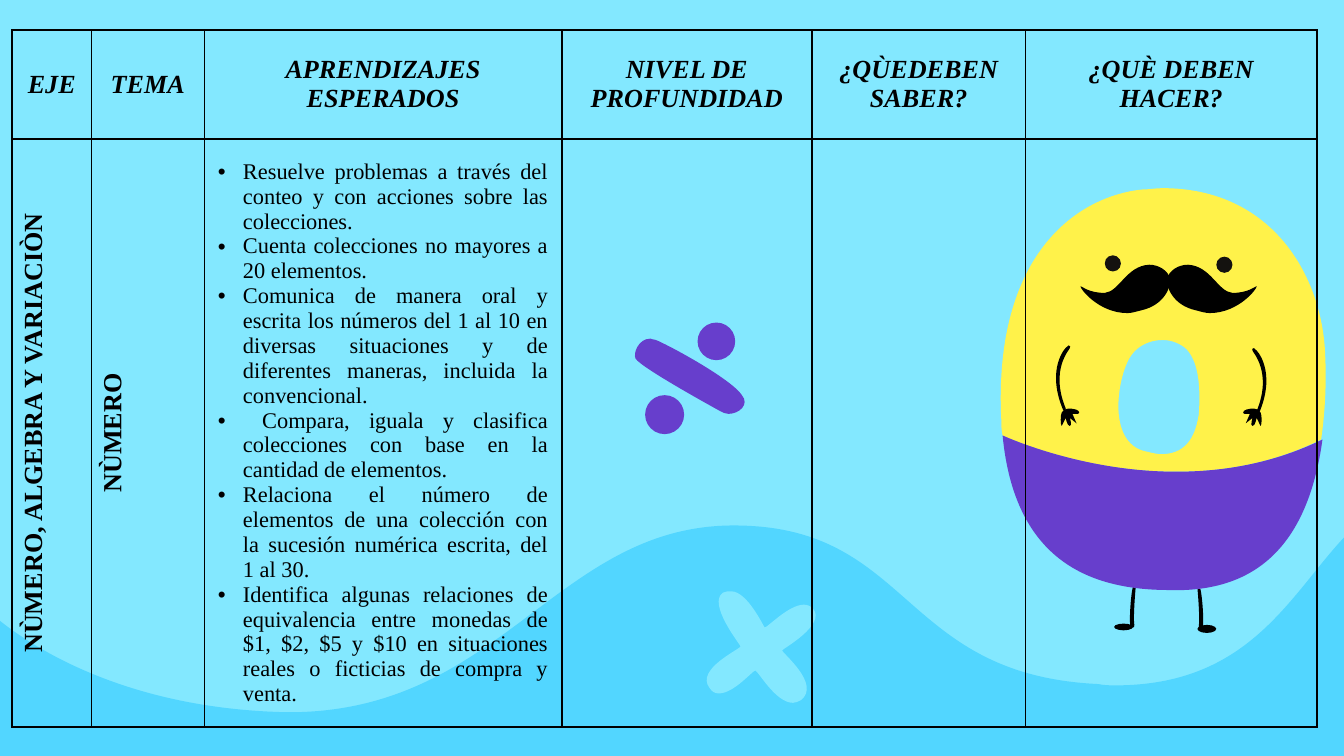
import dataclasses
import lxml.etree
import pptx
import pptx.dml.color
import pptx.enum.shapes
import pptx.enum.text
import pptx.oxml.ns
import pptx.util

Pt = pptx.util.Pt
Align = pptx.enum.text.PP_ALIGN
Anchor = pptx.enum.text.MSO_ANCHOR
qn = pptx.oxml.ns.qn


@dataclasses.dataclass(frozen=True)
class Theme:
    sky: str = "83E8FF"
    wave: str = "52D6FF"
    sun: str = "FFF24A"
    plum: str = "673ECC"
    ink: str = "000000"
    eye: str = "14120F"
    face: str = "Times New Roman"
    head: float = 14
    body: float = 12


THEME = Theme()

WAVE = [(0, 71), (29, 94, 99, 137, 215, 139), (373, 139, 414, 0, 546, 0),
        (679, 0, 669, 111, 817, 118), (822, 119, 826, 119, 830, 119),
        (929, 119, 959, 53, 1000, 9), (1000, 172), (0, 172)]
CROSS = [(27, 0), (25, 0, 23, 0, 21, 1), (9, 9, 34, 40, 34, 41),
         (34, 43, 0, 58, 11, 72), (13, 75, 15, 76, 18, 76),
         (29, 76, 43, 59, 45, 59), (47, 59, 60, 83, 73, 83),
         (75, 83, 77, 82, 79, 81), (94, 69, 65, 46, 65, 44),
         (65, 43, 98, 25, 88, 13), (86, 11, 84, 10, 81, 10),
         (70, 10, 54, 27, 52, 27), (51, 26, 39, 0, 27, 0)]
BAR = [(13, 12), (4, 12, 0, 23, 2, 27), (7, 34, 56, 61, 65, 66),
       (67, 67, 69, 68, 71, 68), (79, 68, 87, 61, 81, 54),
       (73, 42, 27, 17, 17, 13), (15, 13, 14, 12, 13, 12)]
SKIN = [(125, 0), (120, 0, 115, 1, 110, 1), (61, 6, -1, 50, 5, 172),
        (5, 176, 5, 180, 6, 184), (6, 184, 63, 211, 135, 211),
        (170, 211, 207, 205, 243, 187), (246, 166, 247, 145, 246, 124),
        (244, 66, 207, 0, 125, 0)]
HOLE = [(125, 113), (132, 113, 139, 116, 143, 120),
        (153, 131, 153, 152, 152, 168), (150, 181, 145, 198, 124, 198),
        (121, 198, 117, 197, 113, 196), (82, 190, 92, 137, 102, 124),
        (107, 117, 116, 113, 125, 113)]
PANTS = [(6, 184), (15, 278, 72, 299, 130, 299), (134, 299, 137, 299, 141, 299),
         (194, 297, 233, 267, 244, 187), (207, 205, 170, 211, 135, 211),
         (64, 211, 6, 184, 6, 184)]
LEG = [(104, 296), (103, 296, 103, 296, 103, 297), (102, 298, 100, 319, 101, 326),
       (101, 326, 102, 327, 103, 327), (104, 327, 104, 326, 104, 325),
       (103, 319, 105, 297, 105, 297)]
ARM = [(55, 117), (54, 117, 54, 117, 54, 118), (53, 118, 38, 134, 51, 165),
       (51, 165, 51, 166, 52, 166), (53, 165, 53, 164, 53, 164),
       (41, 135, 56, 120, 56, 119), (57, 118, 56, 117, 55, 117)]
HAND = [(55, 164), (53, 164, 51, 165, 50, 167), (49, 169, 49, 176, 50, 177),
        (53, 171), (53, 171, 54, 177, 56, 177), (58, 177, 56, 171, 56, 171),
        (61, 175), (58, 168), (61, 168), (62, 168, 63, 168, 63, 167),
        (63, 165, 59, 164, 55, 164)]
BEARD = [(115, 57), (98, 58, 93, 77, 82, 78), (70, 78, 65, 73, 64, 73),
         (63, 74, 77, 93, 99, 93), (102, 93, 105, 92, 109, 91),
         (127, 87, 131, 73, 131, 68), (129, 61, 122, 57, 115, 57)]

HEADS = ["EJE", "TEMA", "APRENDIZAJES ESPERADOS", "NIVEL DE PROFUNDIDAD",
         "¿QÙEDEBEN SABER?", "¿QUÈ DEBEN HACER?"]
AXES = ["NÙMERO, ALGEBRA Y VARIACIÒN", "NÙMERO"]
GOALS = [
    "Resuelve problemas a través del conteo y con acciones sobre las colecciones.",
    "Cuenta colecciones no mayores a 20 elementos.",
    "Comunica de manera oral y escrita los números del 1 al 10 en diversas "
    "situaciones y de diferentes maneras, incluida la convencional.",
    " Compara, iguala y clasifica colecciones con base en la cantidad de elementos.",
    "Relaciona el número de elementos de una colección con la sucesión numérica "
    "escrita, del 1 al 30.",
    "Identifica algunas relaciones de equivalencia entre monedas de $1, $2, $5 y "
    "$10 en situaciones reales o ficticias de compra y venta.",
]


def tint(code):
    return pptx.dml.color.RGBColor.from_string(code)


def paint(shape, color):
    shape.shadow.inherit = False
    shape.fill.solid()
    shape.fill.fore_color.rgb = tint(color)
    shape.line.fill.background()


def dots(line):
    return [dot for part in line[1:] for dot in zip(part[::2], part[1::2])]


def bend(shape, lines):
    legs = iter(list(shape._element.iter(qn("a:lnTo"))))
    for part in (part for line in lines for part in line[1:]):
        group = [next(legs) for _ in range(len(part) // 2)]
        if len(group) == 3:
            curve = lxml.etree.Element(qn("a:cubicBezTo"))
            group[0].addprevious(curve)
            for leg in group:
                curve.append(leg[0])
                leg.getparent().remove(leg)


def draw(page, box, grid, color, *lines):
    left, top, width = box
    pen = page.shapes.build_freeform(*lines[0][0], scale=Pt(width) / grid)
    for spot, line in enumerate(lines):
        if spot:
            pen.move_to(*line[0])
        pen.add_line_segments(dots(line))
    shape = pen.convert_to_shape(Pt(left), Pt(top))
    bend(shape, lines)
    paint(shape, color)


def pair(page, box, grid, color, line, total, drop):
    twin = [tuple(n + drop if spot % 2 else total - n for spot, n in enumerate(part))
            for part in line]
    for side in (line, twin):
        draw(page, box, grid, color, side)


def oval(page, box, grid, color, spot):
    left, top, width = box
    x, y, w, h = (n * width / grid for n in spot)
    kind = pptx.enum.shapes.MSO_SHAPE.OVAL
    paint(page.shapes.add_shape(kind, Pt(left + x), Pt(top + y), Pt(w), Pt(h)), color)


def add_sea(page, box):
    draw(page, box, 1000, THEME.wave, WAVE)


def add_zero(page, box):
    grid = 250
    pair(page, box, grid, THEME.ink, LEG, 256, 1)
    for spot in ((89, 324, 14, 5), (151, 325, 14, 6)):
        oval(page, box, grid, THEME.ink, spot)
    draw(page, box, grid, THEME.sun, SKIN, HOLE)
    draw(page, box, grid, THEME.plum, PANTS)
    for line, total, drop in ((BEARD, 259, 0), (ARM, 248, 2), (HAND, 248, 0)):
        pair(page, box, grid, THEME.ink, line, total, drop)
    for spot in ((82, 50, 12, 12), (165, 51, 12, 12)):
        oval(page, box, grid, THEME.eye, spot)


def add_times(page, box):
    draw(page, box, 97, THEME.sky, CROSS)


def add_ratio(page, box):
    for spot in ((9, 54, 29, 29), (48, 0, 28, 28)):
        oval(page, box, 87, THEME.plum, spot)
    draw(page, box, 87, THEME.plum, BAR)


def add_mark(para):
    props = para._p.get_or_add_pPr()
    for name, value in {"marL": Pt(13.5), "indent": -Pt(13.5)}.items():
        props.set(name, str(value))
    hue = lxml.etree.SubElement(props, qn("a:buClr"))
    lxml.etree.SubElement(hue, qn("a:srgbClr"), val=THEME.ink)
    lxml.etree.SubElement(props, qn("a:buFont"), typeface="Arial")
    lxml.etree.SubElement(props, qn("a:buChar"), char="•")


def write(cell, lines, align, style, mark=False):
    frame = cell.text_frame
    for spot, line in enumerate(lines):
        para = frame.add_paragraph() if spot else frame.paragraphs[0]
        para.alignment = align
        if mark:
            add_mark(para)
        run = para.add_run()
        run.text = line
        for name, value in {"name": THEME.face, **style}.items():
            setattr(run.font, name, value)
        run.font.color.rgb = tint(THEME.ink)


def edge(cell):
    cell.fill.background()
    props = cell._tc.get_or_add_tcPr()
    for spot, side in enumerate(("lnL", "lnR", "lnT", "lnB")):
        line = lxml.etree.Element(qn("a:" + side), w=str(Pt(1)))
        fill = lxml.etree.SubElement(line, qn("a:solidFill"))
        lxml.etree.SubElement(fill, qn("a:srgbClr"), val=THEME.ink)
        props.insert(spot, line)


def add_plan(page, box):
    cols, rows = (42.5, 60.5, 191.5, 134, 114.5, 156), (58.5, 315)
    spot = [Pt(n) for n in (*box, sum(cols), sum(rows))]
    table = page.shapes.add_table(len(rows), len(cols), *spot).table
    table.first_row = table.horz_banding = False
    for col, width in zip(table.columns, cols):
        col.width = Pt(width)
    for row, height in zip(table.rows, rows):
        row.height = Pt(height)
    for cell in table.iter_cells():
        edge(cell)
        cell.vertical_anchor = Anchor.MIDDLE
    bold = {"size": Pt(THEME.head), "bold": True}
    for col, text in enumerate(HEADS):
        write(table.cell(0, col), [text], Align.CENTER, {**bold, "italic": True})
    for col, text in enumerate(AXES):
        cell = table.cell(1, col)
        write(cell, [text], Align.CENTER, bold)
        cell._tc.get_or_add_tcPr().set("vert", "vert270")
        cell.vertical_anchor = Anchor.TOP
    table.cell(1, 1).vertical_anchor = Anchor.MIDDLE
    write(table.cell(1, 2), GOALS, Align.JUSTIFY, {"size": Pt(THEME.body)}, True)


def main():
    deck = pptx.Presentation()
    deck.slide_width, deck.slide_height = Pt(720), Pt(405)
    page = deck.slides.add_slide(deck.slide_layouts[6])
    page.background.fill.solid()
    page.background.fill.fore_color.rgb = tint(THEME.sky)
    add_sea(page, (0, 281.5, 720))
    add_zero(page, (532.8, 100.8, 180))
    add_times(page, (372.25, 316.8, 69.84))
    add_ratio(page, (339.12, 172.8, 62.64))
    add_plan(page, (6.5, 16))
    deck.save("out.pptx")


if __name__ == "__main__":
    main()
